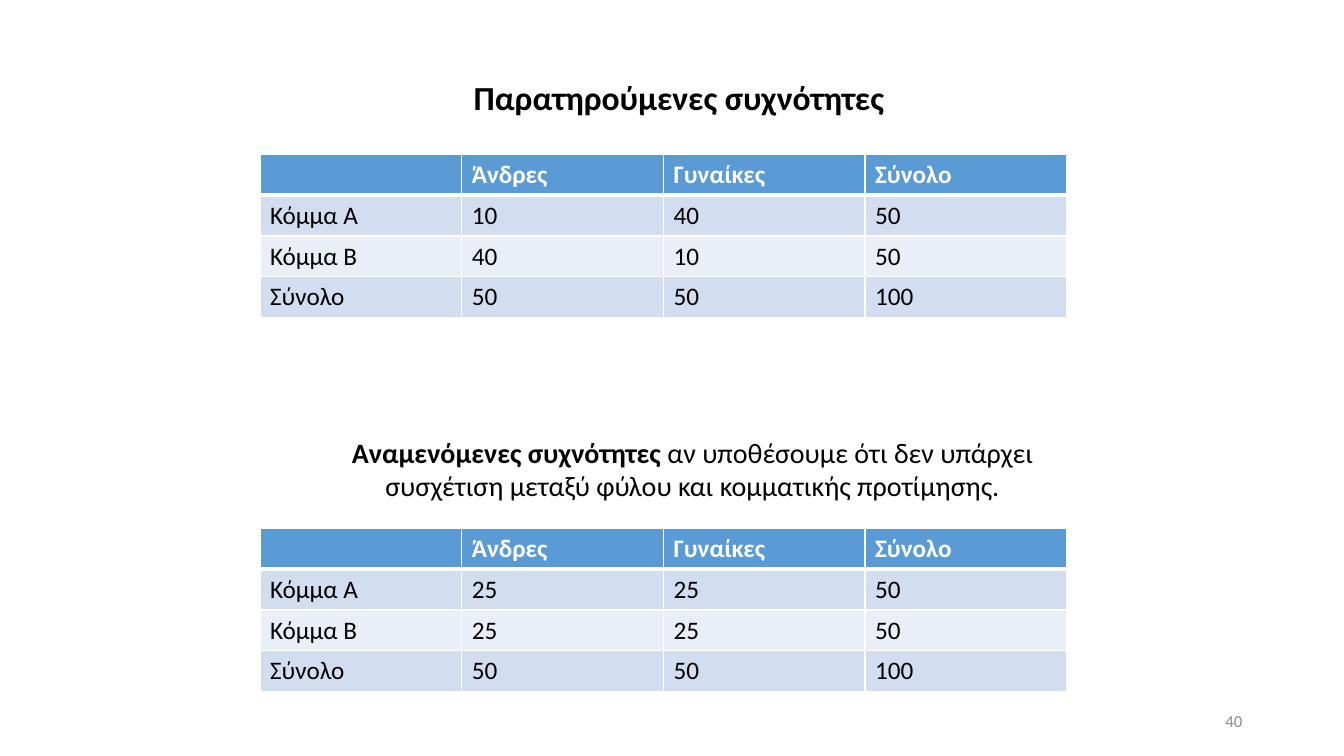
"""Builds a slide comparing observed and expected frequencies of party choice by gender."""
from lxml import etree
from pptx import Presentation
from pptx.dml.color import RGBColor
from pptx.enum.text import MSO_ANCHOR, PP_ALIGN
from pptx.oxml.ns import qn
from pptx.util import Inches, Pt

LEFT, CENTER, RIGHT = PP_ALIGN.LEFT, PP_ALIGN.CENTER, PP_ALIGN.RIGHT
TOP, MIDDLE = MSO_ANCHOR.TOP, MSO_ANCHOR.MIDDLE

WIDTH, HEIGHT = 13.33, 7.5
COLUMN, ROW = 2, 0.4
TABLE_LEFT = 2.58
HEADER_FILL, BAND_FILLS = "5B9BD5", ("D2DEEF", "EAEFF7")
WHITE, BLACK, GREY = "FFFFFF", "000000", "8C8C8C"

GENDERS = ("", "Άνδρες", "Γυναίκες", "Σύνολο")
TOTALS = ("Σύνολο", 50, 50, 100)
FREQUENCIES = [
    (1.53, [GENDERS, ("Κόμμα Α", 10, 40, 50), ("Κόμμα Β", 40, 10, 50), TOTALS]),
    (5.24, [GENDERS, ("Κόμμα Α", 25, 25, 50), ("Κόμμα Β", 25, 25, 50), TOTALS]),
]
CAPTIONS = [
    ((9.42, 6.95, 3, 0.4), RIGHT, MIDDLE, True, [("40", 12, GREY, False)]),
    ((4.6, 0.71, 4.31, 0.5), LEFT, TOP, False,
     [("Παρατηρούμενες συχνότητες", 24, BLACK, True)]),
    ((2.83, 4.27, 8.08, 0.77), CENTER, TOP, True, [
        ("Αναμενόμενες συχνότητες", 20, BLACK, True),
        (" αν υποθέσουμε ότι δεν υπάρχει συσχέτιση μεταξύ φύλου "
         "και κομματικής προτίμησης.", 20, BLACK, False)]),
]


def rgb(value):
    return RGBColor.from_string(value)


def add_run(paragraph, wording, size, color, bold):
    run = paragraph.add_run()
    run.text = wording
    for attribute, value in {"name": "Calibri", "size": Pt(size), "bold": bold}.items():
        setattr(run.font, attribute, value)
    run.font.color.rgb = rgb(color)


def add_caption(slide, place, align, anchor, wrap, runs):
    frame = slide.shapes.add_textbox(*map(Inches, place)).text_frame
    for attribute, value in {"word_wrap": wrap, "vertical_anchor": anchor}.items():
        setattr(frame, attribute, value)
    paragraph = frame.paragraphs[0]
    paragraph.alignment = align
    for run in runs:
        add_run(paragraph, *run)


def set_borders(cell, widths):
    properties = cell._tc.get_or_add_tcPr()
    for position, (side, width) in enumerate(widths.items()):
        line = etree.Element(qn(f"a:{side}"), w=str(Pt(width)))
        fill = etree.SubElement(line, qn("a:solidFill"))
        etree.SubElement(fill, qn("a:srgbClr"), val=WHITE)
        properties.insert(position, line)


def add_frequencies(slide, top, rows):
    place = (TABLE_LEFT, top, COLUMN * len(GENDERS), ROW * len(rows))
    table = slide.shapes.add_table(len(rows), len(GENDERS), *map(Inches, place)).table
    for r, row in enumerate(rows):
        header = r == 0
        for c, entry in enumerate(row):
            cell = table.cell(r, c)
            cell.fill.solid()
            cell.fill.fore_color.rgb = rgb(HEADER_FILL if header else BAND_FILLS[(r - 1) % 2])
            set_borders(cell, {"lnL": 1, "lnR": 1, "lnT": 3 if r == 1 else 1,
                               "lnB": 3 if header else 1})
            if entry != "":
                add_run(cell.text_frame.paragraphs[0], str(entry), 18,
                        WHITE if header else BLACK, header)


def main():
    deck = Presentation()
    deck.slide_width, deck.slide_height = Inches(WIDTH), Inches(HEIGHT)
    slide = deck.slides.add_slide(deck.slide_layouts[6])
    for top, rows in FREQUENCIES:
        add_frequencies(slide, top, rows)
    for caption in CAPTIONS:
        add_caption(slide, *caption)
    deck.save("out.pptx")


if __name__ == "__main__":
    main()
